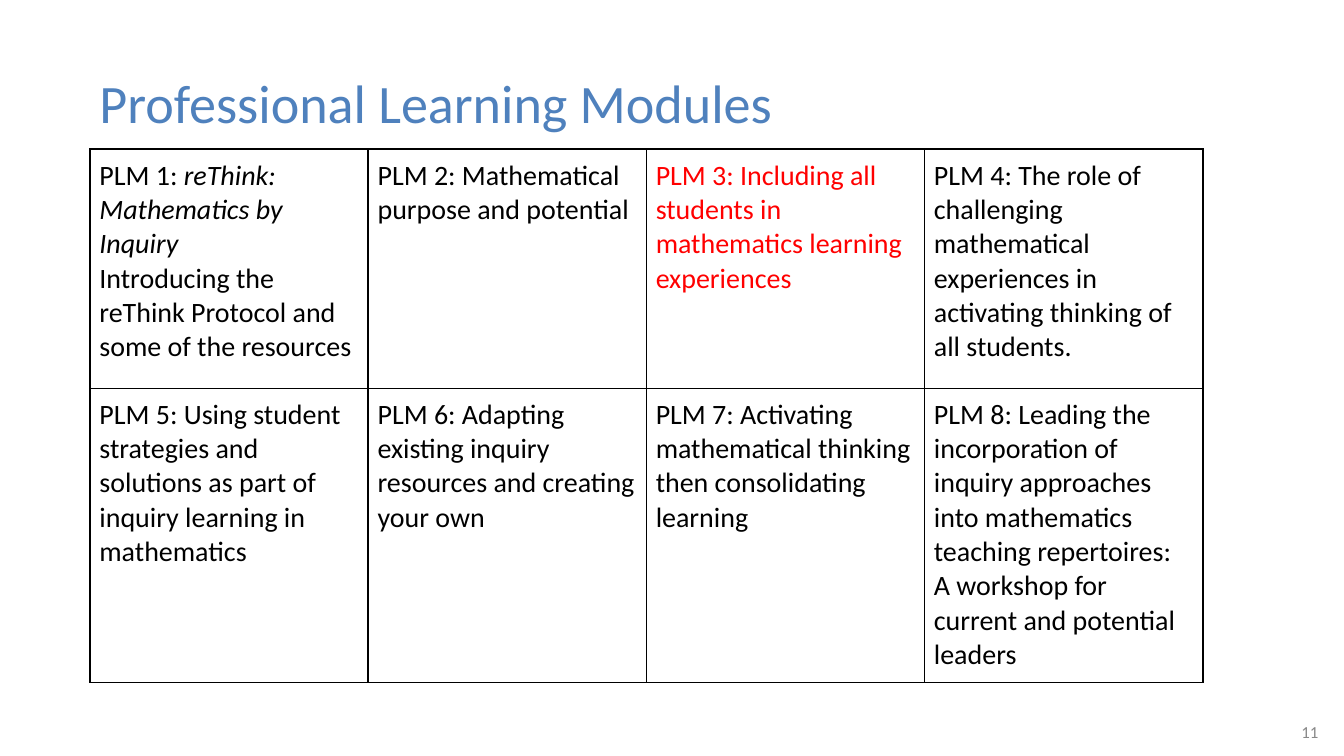
from lxml import etree
from pptx import Presentation
from pptx import util as u
from pptx.dml.color import RGBColor
from pptx.enum import text
from pptx.oxml.ns import qn

BLACK, RED, BLUE, GREY = "000000", "FF0000", "4F81BD", "888888"
MARGINS = ("margin_left", "margin_right", "margin_top", "margin_bottom")


def add_span(para, wording, color, **font_format):
    span = para.add_run()
    span.text = wording
    span.font.color.rgb = RGBColor.from_string(color)
    for name, value in {"name": "Calibri", "bold": False, **font_format}.items():
        setattr(span.font, name, value)


def outline_cell(cell):
    """Draw a thin black border on all four sides, ahead of the cell's fill."""
    properties = cell._tc.get_or_add_tcPr()
    for index, side in enumerate(("lnL", "lnR", "lnT", "lnB")):
        line = etree.Element(qn(f"a:{side}"), w=str(u.Pt(1)))
        fill = etree.SubElement(line, qn("a:solidFill"))
        etree.SubElement(fill, qn("a:srgbClr"), val=BLACK)
        properties.insert(index, line)


deck = Presentation()
deck.slide_width = u.Inches(10)
deck.slide_height = deck.slide_width * 9 // 16
slide = deck.slides.add_slide(deck.slide_layouts[6])

# Title and page number
labels = [
    ("Professional Learning Modules", (0.67, 0.5, 6.5, 0.74), 0.07, 29, BLUE,
     {"line_spacing": 0.9}),
    ("11", (9.22, 5.33, 0.66, 0.3), 0.04, 9, GREY,
     {"alignment": text.PP_ALIGN.RIGHT}),
]
for wording, place, vertical_margin, size, color, para_format in labels:
    box = slide.shapes.add_textbox(*map(u.Inches, place))
    frame = box.text_frame
    frame.word_wrap = True
    for name, margin in zip(MARGINS, (0.07, 0.07, vertical_margin, vertical_margin)):
        setattr(frame, name, u.Inches(margin))
    para = frame.paragraphs[0]
    for name, value in para_format.items():
        setattr(para, name, value)
    add_span(para, wording, color, size=u.Pt(size))

# Each module is a list of paragraphs, each paragraph a list of (wording, italic)
modules = [
    [[("PLM 1: ", False), ("reThink: Mathematics by Inquiry", True)],
     [("Introducing the reThink Protocol and some of the resources", False)]],
    [[("PLM 2: Mathematical purpose and potential", False)]],
    [[("PLM 3: Including all students in mathematics learning experiences", False)]],
    [[("PLM 4: The role of challenging mathematical experiences in activating "
       "thinking of all students.", False)]],
    [[("PLM 5: Using student strategies and solutions as part of inquiry learning "
       "in mathematics", False)]],
    [[("PLM 6: Adapting existing inquiry resources and creating your own", False)]],
    [[("PLM 7: Activating mathematical thinking then consolidating learning", False)]],
    [[("PLM 8: Leading the incorporation of inquiry approaches into mathematics "
       "teaching repertoires: A workshop for current and potential leaders", False)]],
]
current_module = 2
row_heights = (1.78, 2.19)

place = (0.67, 1.11, 8.28, sum(row_heights))
table = slide.shapes.add_table(2, 4, *map(u.Inches, place)).table
table.first_row = table.horz_banding = False
for row, height in zip(table.rows, row_heights):
    row.height = u.Inches(height)
for column in table.columns:
    column.width = u.Inches(2.07)

for index, (cell, module) in enumerate(zip(table.iter_cells(), modules)):
    cell.fill.background()
    outline_cell(cell)
    for name in MARGINS:
        setattr(cell, name, u.Inches(0.07))
    color = RED if index == current_module else BLACK
    for number, spans in enumerate(module):
        frame = cell.text_frame
        para = frame.add_paragraph() if number else frame.paragraphs[0]
        for wording, italic in spans:
            add_span(para, wording, color, size=u.Pt(15), italic=italic)

deck.save("out.pptx")
